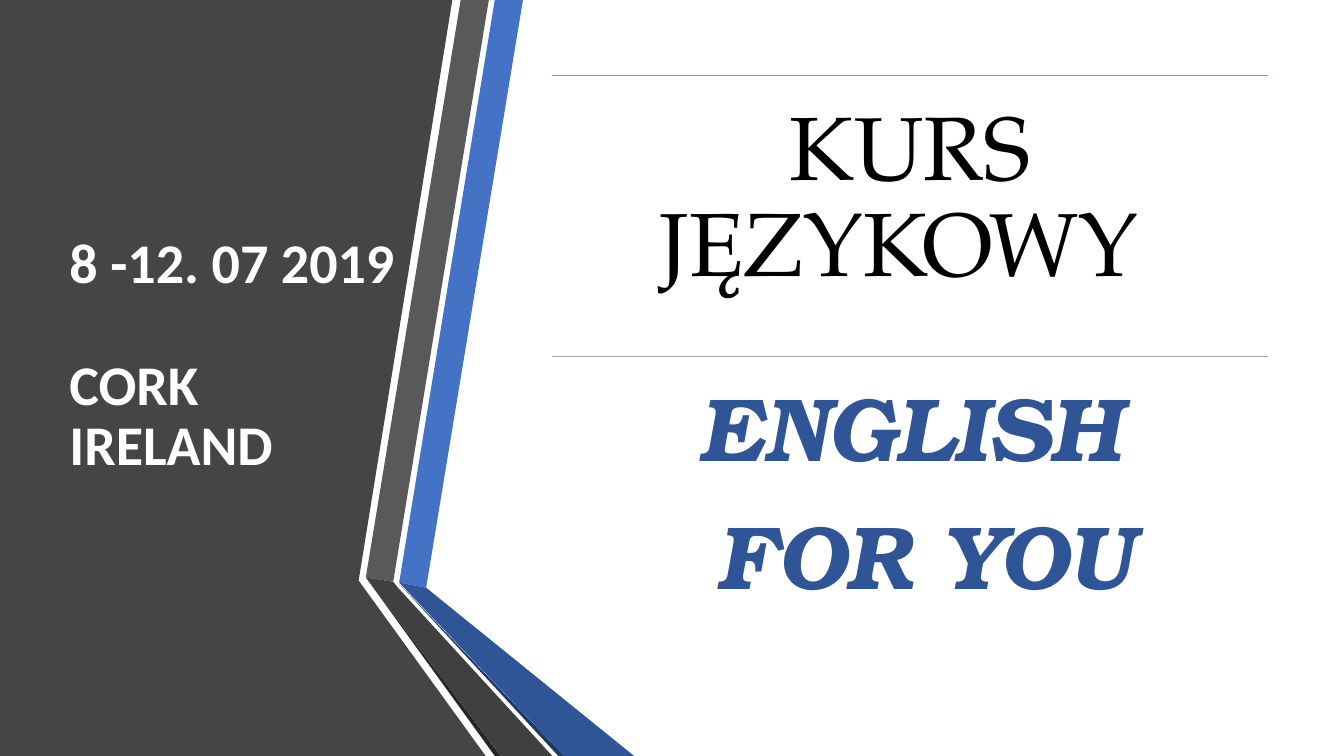
import pptx
import pptx.util
import pptx.dml.color
import pptx.enum.shapes
import pptx.enum.text
import pptx.oxml

Cm = pptx.util.Cm
Pt = pptx.util.Pt

SLIDE_WIDTH, SLIDE_HEIGHT = 33.87, 19.05
COLORS = {
    "panel": "454545",
    "blue": "4472C4",
    "gray": "595959",
    "gray_edge": "262626",
    "blue_edge": "203864",
    "deep_blue": "2F5597",
    "dark_gray": "404040",
    "orange": "ED7D31",
    "silver": "A5A5A5",
    "black": "000000",
    "white": "FFFFFF",
}
PANEL_OUTLINE = [(0, 0), (11.4, 0), (9.04, 14.63), (12.24, 19.05), (0, 19.05)]
RIBBONS = [
    ("blue", [(10.06, 14.68), (10.74, 14.81), (13.18, 0), (12.47, 0)]),
    ("gray", [(12.32, 0), (11.61, 0), (9.22, 14.55), (9.91, 14.66)]),
    ("gray_edge", [(9.22, 14.55), (12.47, 19.05), (12.62, 19.05)]),
    ("blue_edge", [(10.06, 14.71), (14.07, 19.05), (14.22, 19.05)]),
    ("deep_blue", [(10.06, 14.68), (14.22, 19.05), (15.98, 19.05), (10.74, 14.81)]),
    ("dark_gray", [(13.92, 19.05), (10.03, 14.81), (9.91, 14.66), (9.22, 14.55), (12.62, 19.05)]),
]


def rgb(name):
    """Return the named colour."""
    return pptx.dml.color.RGBColor.from_string(COLORS[name])


def add_outline(shapes, left, top, points, color):
    """Draw a filled polygon whose points are relative to left and top."""
    corners = [(Cm(left + x), Cm(top + y)) for x, y in points]
    builder = shapes.build_freeform(*corners[0])
    builder.add_line_segments(corners[1:], close=True)
    shape = builder.convert_to_shape()
    shape.shadow.inherit = False
    shape.fill.solid()
    shape.fill.fore_color.rgb = rgb(color)
    shape.line.fill.background()


def add_text(shapes, box, lines, size, font, color, bold=False, italic=False):
    """Add a wrapped text box with one paragraph per line and return its frame."""
    text_frame = shapes.add_textbox(*map(Cm, box)).text_frame
    text_frame.word_wrap = True
    text_frame.text = "\n".join(lines)
    for paragraph in text_frame.paragraphs:
        paragraph.line_spacing = 0.9
        for run in paragraph.runs:
            run.font.size = Pt(size)
            run.font.name = font
            run.font.bold = bold
            run.font.italic = italic
            run.font.color.rgb = rgb(color)
    return text_frame


def add_side_panel(slide, left, top):
    """Draw the dark panel, its folded ribbons and the date and place."""
    add_outline(slide.shapes, left, top, PANEL_OUTLINE, "panel")
    group = slide.shapes.add_group_shape()
    for color, points in RIBBONS:
        add_outline(group.shapes, left, top, points, color)
    text_frame = add_text(slide.shapes, (left + 1.5, top + 1.9, 9, 14.17),
                          ["8 -12. 07 2019", "CORK \vIRELAND"],
                          40, "Calibri", "white", bold=True)
    text_frame.vertical_anchor = pptx.enum.text.MSO_ANCHOR.MIDDLE
    text_frame.paragraphs[1].space_before = Pt(44)


def add_ruled_block(slide, box, rule_color, lines, font, color, **style):
    """Place large centred text under a thin rule along the top of the box."""
    left, top, width, height = box
    rule = slide.shapes.add_connector(pptx.enum.shapes.MSO_CONNECTOR.STRAIGHT,
                                      Cm(left), Cm(top), Cm(left + width), Cm(top))
    rule.line.color.rgb = rgb(rule_color)
    rule.line.width = Pt(1)
    rule._element.spPr.append(pptx.oxml.parse_xml(
        '<a:effectLst xmlns:a="http://schemas.openxmlformats.org/drawingml/2006/main"/>'))
    text_frame = add_text(slide.shapes, box, lines, 64, font, color, **style)
    text_frame.margin_left = text_frame.margin_right = Cm(0.69)
    text_frame.margin_top = text_frame.margin_bottom = Cm(0.69)
    for paragraph in text_frame.paragraphs:
        paragraph.alignment = pptx.enum.text.PP_ALIGN.CENTER
        paragraph.space_after = Pt(22)


def main():
    """Build the course title slide."""
    presentation = pptx.Presentation()
    presentation.slide_width = Cm(SLIDE_WIDTH)
    presentation.slide_height = Cm(SLIDE_HEIGHT)
    slide = presentation.slides.add_slide(presentation.slide_layouts[6])
    add_side_panel(slide, 0, 0)
    left, top, width, height = 13.92, 1.9, 18.03, 7.09
    add_ruled_block(slide, (left, top, width, height), "orange",
                    ["KURS JĘZYKOWY "], "TeX Gyre Pagella", "black")
    add_ruled_block(slide, (left, top + height, width, height), "silver",
                    ["ENGLISH", " FOR YOU"], "TeX Gyre Bonum", "deep_blue",
                    bold=True, italic=True)
    presentation.save("out.pptx")


if __name__ == "__main__":
    main()
